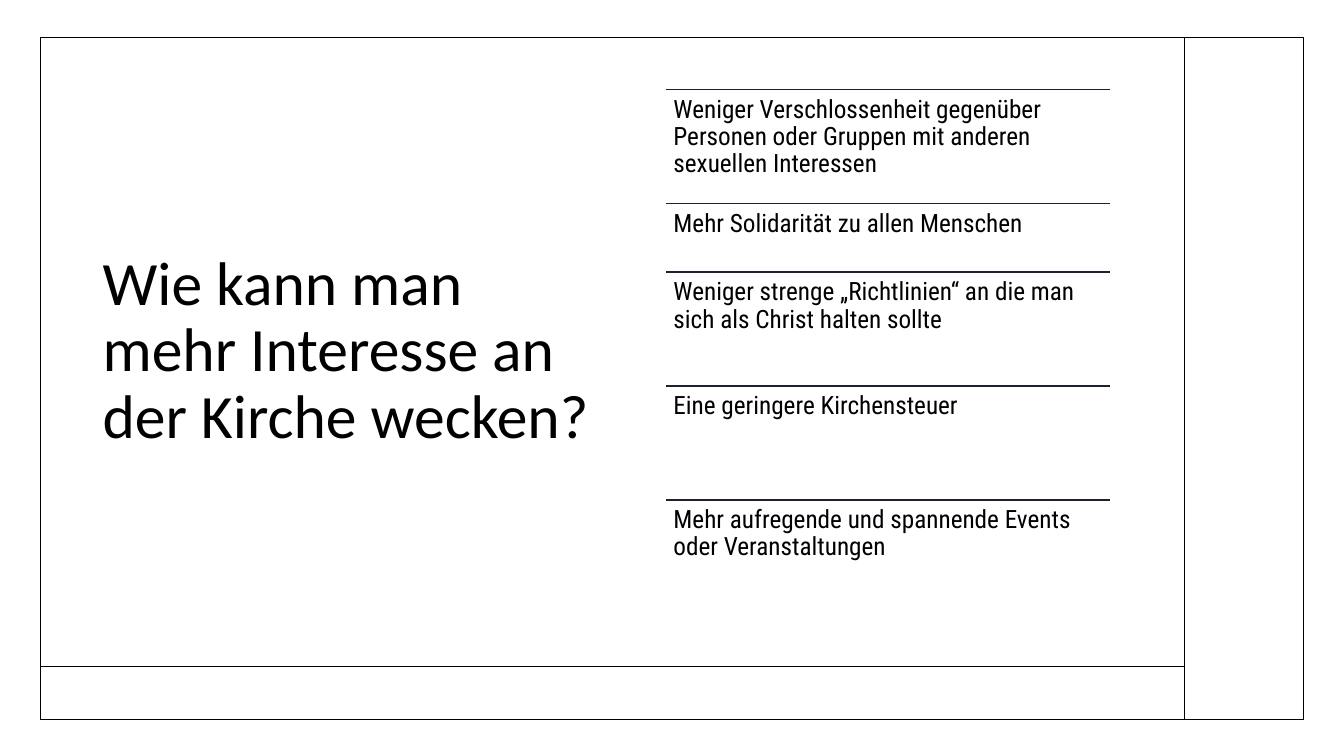
"""Build a slide listing ideas for raising interest in the church."""
from lxml import etree
from pptx import Presentation
from pptx.dml.color import RGBColor
from pptx.enum import shapes, text
from pptx.oxml import ns
from pptx.util import Inches, Pt

COLORS = {"ink": "000000", "rule": "1C2131"}
QUESTION = "Wie kann man mehr Interesse an der Kirche wecken?"
TALL, SHORT = 1.13, 0.68
IDEAS = [
    ("Weniger Verschlossenheit gegenüber Personen oder Gruppen mit anderen sexuellen Interessen", TALL),
    ("Mehr Solidarität zu allen Menschen", SHORT),
    ("Weniger strenge „Richtlinien“ an die man sich als Christ halten sollte", TALL),
    ("Eine geringere Kirchensteuer", TALL),
    ("Mehr aufregende und spannende Events oder Veranstaltungen", TALL),
]
IDEA_LEFT, IDEA_TOP, IDEA_WIDTH = 6.61, 0.89, 4.4


def style_line(line, color):
    """Give a line its colour and a width of one point."""
    line.color.rgb = RGBColor.from_string(COLORS[color])
    line.width = Pt(1)


def add_frame(slide, left, top, width, height):
    """Add an unfilled rectangular frame."""
    frame = slide.shapes.add_shape(
        shapes.MSO_SHAPE.RECTANGLE, Inches(left), Inches(top), Inches(width), Inches(height))
    frame.shadow.inherit = False
    frame.fill.background()
    style_line(frame.line, "ink")


def add_rule(slide, x1, y1, x2, y2, color):
    """Add a straight line without a shadow."""
    rule = slide.shapes.add_connector(
        shapes.MSO_CONNECTOR.STRAIGHT, Inches(x1), Inches(y1), Inches(x2), Inches(y2))
    style_line(rule.line, color)
    etree.SubElement(rule._element.spPr, ns.qn("a:effectLst"))


def add_text(slide, wording, left, top, width, height, font, size,
             inset=(0.1, 0.05), anchor=text.MSO_ANCHOR.TOP):
    """Add a wrapped text box holding one paragraph."""
    box = slide.shapes.add_textbox(Inches(left), Inches(top), Inches(width), Inches(height))
    frame = box.text_frame
    frame.word_wrap = True
    frame.vertical_anchor = anchor
    frame.margin_left = frame.margin_right = Inches(inset[0])
    frame.margin_top = frame.margin_bottom = Inches(inset[1])
    paragraph = frame.paragraphs[0]
    paragraph.text = wording
    paragraph.line_spacing = 0.9
    paragraph.font.name = font
    paragraph.font.size = Pt(size)
    paragraph.font.color.rgb = RGBColor.from_string(COLORS["ink"])


def add_ideas(slide):
    """Stack the ideas, each under its own rule."""
    top = IDEA_TOP
    for idea, height in IDEAS:
        add_rule(slide, IDEA_LEFT, top, IDEA_LEFT + IDEA_WIDTH, top, "rule")
        add_text(slide, idea, IDEA_LEFT, top, IDEA_WIDTH, height,
                 "Roboto Condensed", 18, inset=(0.07, 0.07))
        top += height


def main():
    """Build and save the slide."""
    deck = Presentation()
    deck.slide_width, deck.slide_height = Inches(13.33), Inches(7.5)
    slide = deck.slides.add_slide(deck.slide_layouts[6])
    add_frame(slide, 0.4, 0.37, 12.53, 6.77)
    add_text(slide, QUESTION, 0.92, 0.89, 5.17, 5.2, "Calibri", 44,
             anchor=text.MSO_ANCHOR.MIDDLE)
    add_rule(slide, 0.41, 6.61, 11.75, 6.61, "ink")
    add_rule(slide, 11.75, 0.37, 11.75, 7.13, "ink")
    add_ideas(slide)
    deck.save("out.pptx")


if __name__ == "__main__":
    main()
